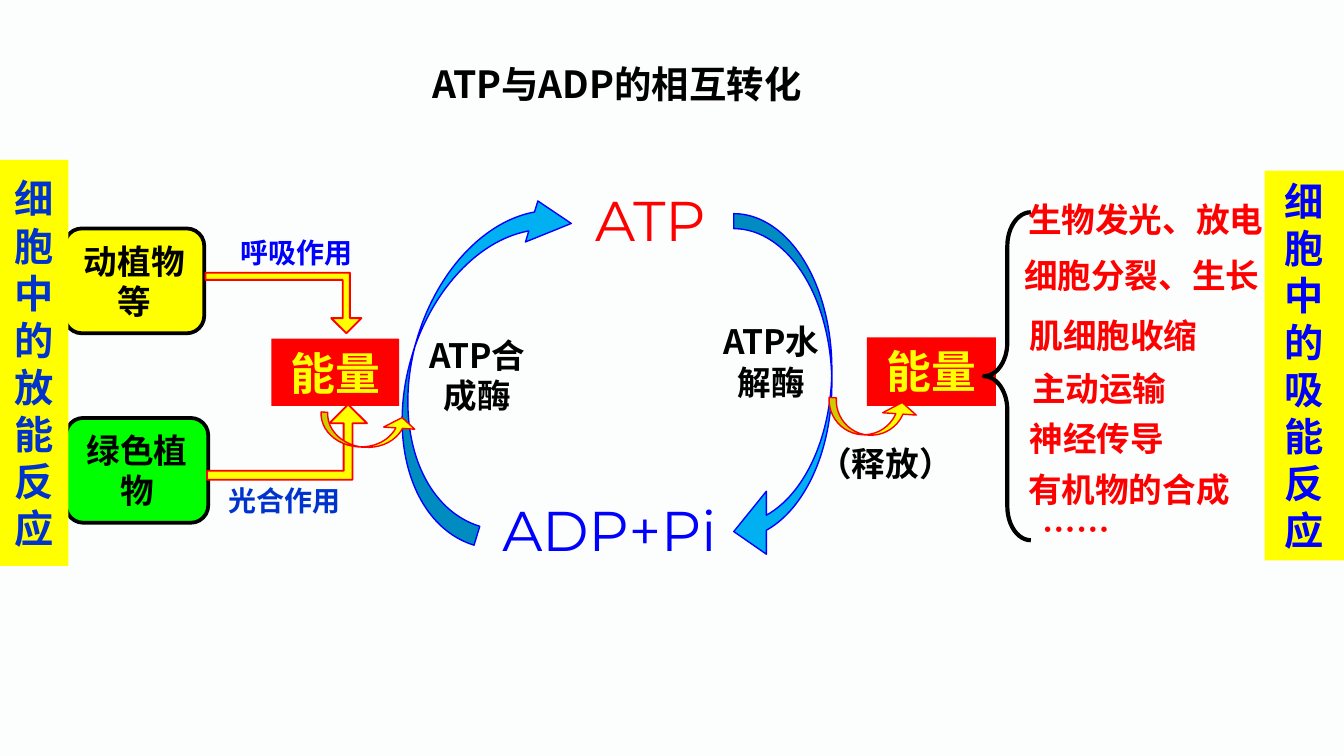
from dataclasses import dataclass
from lxml import etree
from pptx import Presentation, util as u
from pptx.dml.color import RGBColor
from pptx.enum import shapes, text
from pptx.oxml.ns import qn

PX = 9144
KIND = shapes.MSO_SHAPE


@dataclass(frozen=True)
class Theme:
    page: str = "FCFDFD"
    black: str = "000000"
    red: str = "FF0000"
    blue: str = "0000FF"
    navy: str = "0033CC"
    yellow: str = "FFFF00"
    green: str = "00FF00"
    sky: str = "00B0F0"
    cjk: str = "Noto Sans CJK SC"
    latin: str = "Montserrat"
    molecule: int = 30
    energy: int = 24
    banner: int = 21
    title: int = 20
    body: int = 18
    label: int = 15


THEME = Theme()
WIDE_INSET = (10, 5)
SLIM_INSET = (7, 4)


def color(value):
    return RGBColor.from_string(value)


def place(box, left, top, width, height):
    return [v * PX for v in (box[0] + left, box[1] + top, width, height)]


def write(shape, words, size, tint, font=THEME.cjk, bold=True, inset=WIDE_INSET,
          align=text.PP_ALIGN.CENTER, anchor=text.MSO_ANCHOR.TOP):
    frame = shape.text_frame
    frame.text = words
    frame.word_wrap = True
    frame.vertical_anchor = anchor
    frame.margin_left = frame.margin_right = inset[0] * PX
    frame.margin_top = frame.margin_bottom = inset[1] * PX
    para = frame.paragraphs[0]
    para.alignment = align
    for span in para.runs:
        span.font.size = u.Pt(size)
        span.font.bold = bold
        span.font.color.rgb = color(tint)
        span.font.name = font
        east = etree.SubElement(span._r.get_or_add_rPr(), qn("a:ea"))
        east.set("typeface", font)


def add_label(page, box, area, words, size, tint, **style):
    write(page.shapes.add_textbox(*place(box, *area)), words, size, tint, **style)


def add_figure(page, box, area, kind, fill=None, line=None, weight=0.75,
               adjust=(), turn=0):
    shape = page.shapes.add_shape(kind, *place(box, *area))
    shape.shadow.inherit = False
    shape.rotation = turn
    for index, value in enumerate(adjust):
        shape.adjustments[index] = value
    if fill:
        shape.fill.solid()
        shape.fill.fore_color.rgb = color(fill)
    else:
        shape.fill.background()
    if line:
        shape.line.color.rgb = color(line)
        shape.line.width = u.Pt(weight)
    else:
        shape.line.fill.background()
    return shape


def add_energy(page, box, area):
    block = add_figure(page, box, area, KIND.RECTANGLE, THEME.red)
    write(block, "能量", THEME.energy, THEME.yellow)


def add_transfer(page, box, area):
    add_figure(page, box, area, KIND.CURVED_UP_ARROW, THEME.yellow, THEME.red,
               adjust=(0.206, 0.965, 0.333), turn=4)


def add_banner(page, box, words, tint):
    banner = add_figure(page, box, (0, 0, *box[2:]), KIND.RECTANGLE, THEME.yellow)
    write(banner, words, THEME.banner, tint, inset=SLIM_INSET,
          anchor=text.MSO_ANCHOR.MIDDLE)


def add_title(page, box):
    add_label(page, box, (0, 0, *box[2:]), "ATP与ADP的相互转化",
              THEME.title, THEME.black)


def add_cycle(page, box):
    for area, words, tint in (((122, 0, 118, 61), "ATP", THEME.red),
                              ((57, 231, 187, 61), "ADP+Pi", THEME.blue)):
        add_label(page, box, area, words, THEME.molecule, tint,
                  font=THEME.latin, bold=False)
    for area, words in (((223, 101, 96, 71), "ATP水解酶"),
                        ((0, 111, 104, 71), "ATP合成酶")):
        add_label(page, box, area, words, THEME.body, THEME.black)
    for area, adjust, turn in (((243, 26, 73, 260), (0.153, 0.642, 0.333), 0),
                               ((5, 0, 85, 266), (0.173, 0.375, 0.337), 196.8)):
        add_figure(page, box, area, KIND.CURVED_LEFT_ARROW, THEME.sky, THEME.blue,
                   adjust=adjust, turn=turn)


def add_uses(page, box):
    add_energy(page, box, (46, 107, 96, 51))
    add_transfer(page, box, (17, 154, 67, 26))
    add_label(page, box, (0, 181, 132, 40), "（释放）", THEME.body, THEME.black,
              align=text.PP_ALIGN.LEFT)
    add_figure(page, box, (133, 14, 35, 244), KIND.LEFT_BRACE, line=THEME.black,
               weight=2.25, adjust=(0.716, 0.5))
    uses = (((159, 0, 197, 68), "生物发光、放电"),
            ((156, 42, 197, 68), "细胞分裂、生长"),
            ((160, 86, 145, 68), "肌细胞收缩"),
            ((162, 126, 119, 68), "主动运输"),
            ((160, 163, 130, 38), "神经传导"),
            ((159, 201, 171, 68), "有机物的合成"),
            ((170, 231, 117, 38), "……"))
    for area, words in uses:
        add_label(page, box, area, words, THEME.body, THEME.red,
                  inset=SLIM_INSET, align=text.PP_ALIGN.LEFT)


def add_sources(page, box):
    sources = (
        ("动植物等", (0, 0, 104, 78), THEME.yellow, (105, 33, 116, 45), True,
         "呼吸作用", (105, 0, 136, 73), THEME.blue),
        ("绿色植物", (1, 141, 106, 78), THEME.green, (106, 131, 119, 56), False,
         "光合作用", (107, 185, 113, 38), THEME.navy))
    for name, area, fill, path_area, flipped, process, label_area, tint in sources:
        add_label(page, box, label_area, process, THEME.label, tint)
        organism = add_figure(page, box, area, KIND.ROUNDED_RECTANGLE, fill,
                              THEME.black, 2, (0.167,))
        write(organism, name, THEME.body, THEME.black,
              anchor=text.MSO_ANCHOR.MIDDLE)
        arrow = add_figure(page, box, path_area, KIND.BENT_UP_ARROW, THEME.yellow,
                           THEME.red, 1, (0.118, 0.25, 0.25))
        if flipped:
            arrow._element.spPr.xfrm.set("flipV", "1")
    add_energy(page, box, (154, 82, 95, 50))
    add_transfer(page, box, (190, 139, 72, 24))


def main():
    deck = Presentation()
    deck.slide_width = u.Inches(10)
    deck.slide_height = deck.slide_width * 9 // 16
    page = deck.slides.add_slide(deck.slide_layouts[6])
    page.background.fill.solid()
    page.background.fill.fore_color.rgb = color(THEME.page)
    add_cycle(page, (303, 133, 319, 292))
    add_banner(page, (941, 127, 59, 290), "细胞中的吸能反应", THEME.blue)
    add_uses(page, (599, 144, 356, 269))
    add_sources(page, (48, 170, 262, 223))
    add_banner(page, (0, 119, 51, 302), "细胞中的放能反应", THEME.navy)
    add_title(page, (219, 41, 480, 44))
    deck.save("out.pptx")


if __name__ == "__main__":
    main()
